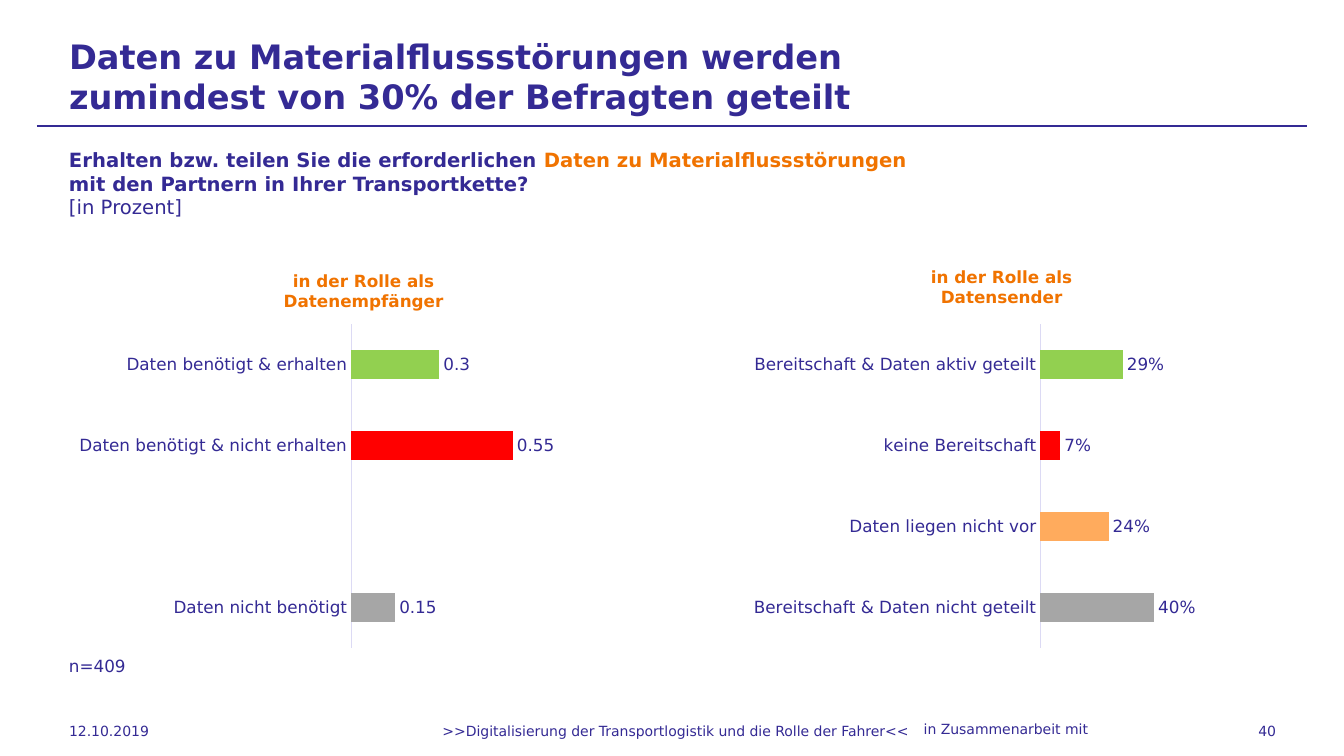
"""Build the survey slide on sharing material flow disruption data."""
from lxml import etree
from pptx import Presentation
from pptx.chart.data import CategoryChartData
from pptx.dml.color import RGBColor
from pptx.enum.chart import XL_CHART_TYPE, XL_LABEL_POSITION, XL_TICK_MARK
from pptx.enum.shapes import MSO_CONNECTOR
from pptx.enum.text import MSO_ANCHOR, PP_ALIGN
from pptx.oxml import parse_xml
from pptx.oxml.ns import nsdecls, qn
from pptx.util import Pt

SCALE = 914400 / 100.8
FONT = "DejaVu Sans"
BAR = XL_CHART_TYPE.BAR_CLUSTERED
STRAIGHT = MSO_CONNECTOR.STRAIGHT
OUTSIDE = XL_LABEL_POSITION.OUTSIDE_END
NO_TICK = XL_TICK_MARK.NONE
TOP, MIDDLE = MSO_ANCHOR.TOP, MSO_ANCHOR.MIDDLE
LEFT, CENTER, RIGHT = PP_ALIGN.LEFT, PP_ALIGN.CENTER, PP_ALIGN.RIGHT
COLORS = {
    "indigo": "342A94", "orange": "F07300", "axis": "DCDAF4", "white": "FFFFFF",
    "grey": "A6A6A6", "apricot": "FFAB5D", "red": "FF0000", "green": "92D050",
}
BAR_COLORS = ["grey", "apricot", "red", "green"]


def px(*lengths):
    """Turn pixel lengths into EMU."""
    return [round(length * SCALE) for length in lengths]


def set_font(font, size, color, bold=False):
    """Apply the slide typeface with a size, colour and weight."""
    for name, value in {"name": FONT, "size": Pt(size), "bold": bold}.items():
        setattr(font, name, value)
    font.color.rgb = RGBColor.from_string(COLORS[color])


deck = Presentation()
deck.slide_width, deck.slide_height = px(1344, 756)
page = deck.slides.add_slide(deck.slide_layouts[6])

rule = page.shapes.add_connector(STRAIGHT, *px(37, 126, 1307, 126))
rule.line.color.rgb = RGBColor.from_string(COLORS["indigo"])
rule.line.width = Pt(0.75)
etree.SubElement(rule._element.spPr, qn("a:effectLst"))

title = "Daten zu Materialflussstörungen werden zumindest von 30% der Befragten geteilt"
footer = ">>Digitalisierung der Transportlogistik und die Rolle der Fahrer<<"
question = [
    ("Erhalten bzw. teilen Sie die erforderlichen ", "indigo", True, False),
    ("Daten zu Materialflussstörungen", "orange", True, True),
    ("mit den Partnern in Ihrer Transportkette?", "indigo", True, True),
    ("[in Prozent]", "indigo", False, False),
]
texts = [
    ((69, 60, 952, 32), 24, LEFT, MIDDLE, [(title, "indigo", True, False)]),
    ((69, 148, 1018, 72), 14, LEFT, TOP, question),
    ((69, 656, 58, 20), 12, LEFT, TOP, [("n=409", "indigo", False, False)]),
    ((69, 711, 158, 40), 10, LEFT, MIDDLE, [("12.10.2019", "indigo", False, False)]),
    ((243, 711, 865, 40), 10, CENTER, MIDDLE, [(footer, "indigo", False, False)]),
    ((852, 721, 236, 17), 10, RIGHT, TOP,
     [("in Zusammenarbeit mit", "indigo", False, False)]),
    ((1125, 711, 151, 40), 10, RIGHT, MIDDLE, [("40", "indigo", False, False)]),
]
for place, size, align, anchor, spans in texts:
    box = page.shapes.add_textbox(*px(*place))
    frame = box.text_frame
    frame_format = {
        "word_wrap": True, "vertical_anchor": anchor, "margin_left": 0,
        "margin_right": 0, "margin_top": 0, "margin_bottom": 0,
    }
    for name, value in frame_format.items():
        setattr(frame, name, value)
    para = frame.paragraphs[0]
    para.alignment = align
    for words, color, bold, line_break in spans:
        span = para.add_run()
        span.text = words
        set_font(span.font, size, color, bold)
        if line_break:
            para.add_line_break()

charts = [
    {
        "place": (69, 251, 588, 405),
        "role": "Datenempfänger",
        "answers": ["Daten nicht benötigt", "", "Daten benötigt & nicht erhalten",
                    "Daten benötigt & erhalten"],
        "shares": [0.15, None, 0.55, 0.3],
        "format": "General",
        "title": {"x": 0.36, "y": 0.04},
        "plot": {"x": 0.48, "y": 0.18, "w": 0.5, "h": 0.8},
    },
    {
        "place": (744, 251, 593, 405),
        "role": "Datensender",
        "answers": ["Bereitschaft & Daten nicht geteilt", "Daten liegen nicht vor",
                    "keine Bereitschaft", "Bereitschaft & Daten aktiv geteilt"],
        "shares": [0.4, 0.24, 0.07, 0.29],
        "format": "0%",
        "title": {"x": 0.31, "y": 0.03},
        "plot": {"x": 0.5, "y": 0.18, "w": 0.48, "h": 0.8},
    },
]
for item in charts:
    data = CategoryChartData(number_format=item["format"])
    data.categories = item["answers"]
    data.add_series("Anteil", item["shares"])
    chart = page.shapes.add_chart(BAR, *px(*item["place"]), data).chart
    chart.has_legend = False
    set_font(chart.font, 12, "indigo")

    chart.has_title = True
    heading = chart.chart_title.text_frame
    heading.text = "in der Rolle als"
    heading.add_paragraph().text = item["role"]
    for para in heading.paragraphs:
        set_font(para.runs[0].font, 12, "orange", True)
    chart.chart_title.include_in_layout = False

    category_axis, value_axis = chart.category_axis, chart.value_axis
    category_axis.major_tick_mark = NO_TICK
    category_axis.format.line.color.rgb = RGBColor.from_string(COLORS["axis"])
    category_axis.format.line.width = Pt(0.75)
    axis_format = {
        "visible": False, "has_major_gridlines": False,
        "minimum_scale": 0, "maximum_scale": 1,
    }
    for name, value in axis_format.items():
        setattr(value_axis, name, value)

    bars = chart.plots[0]
    bars.gap_width = 182
    bars.vary_by_categories = False
    bars.has_data_labels = True
    label_format = {
        "show_value": True, "position": OUTSIDE,
        "number_format": item["format"], "number_format_is_linked": False,
    }
    for name, value in label_format.items():
        setattr(bars.data_labels, name, value)
    set_font(bars.data_labels.font, 12, "indigo")

    series = bars.series[0]
    series.format.fill.solid()
    series.format.fill.fore_color.rgb = RGBColor.from_string(COLORS["white"])
    for index, (share, color) in enumerate(zip(item["shares"], BAR_COLORS)):
        if share is not None:
            fill = series.points[index].format.fill
            fill.solid()
            fill.fore_color.rgb = RGBColor.from_string(COLORS[color])

    chart_xml = chart._chartSpace.chart
    for tag, target in (("title", "c:title"), ("plot", "c:plotArea")):
        parent = chart_xml.find(qn(target))
        for old in parent.findall(qn("c:layout")):
            parent.remove(old)
        layout = parse_xml(f"<c:layout {nsdecls('c')}><c:manualLayout/></c:layout>")
        manual = layout[0]
        if tag == "plot":
            etree.SubElement(manual, qn("c:layoutTarget")).set("val", "inner")
        for key in ("x", "y"):
            etree.SubElement(manual, qn(f"c:{key}Mode")).set("val", "edge")
        for key, value in item[tag].items():
            etree.SubElement(manual, qn(f"c:{key}")).set("val", str(value))
        parent.insert(1 if tag == "title" else 0, layout)

deck.save("out.pptx")
